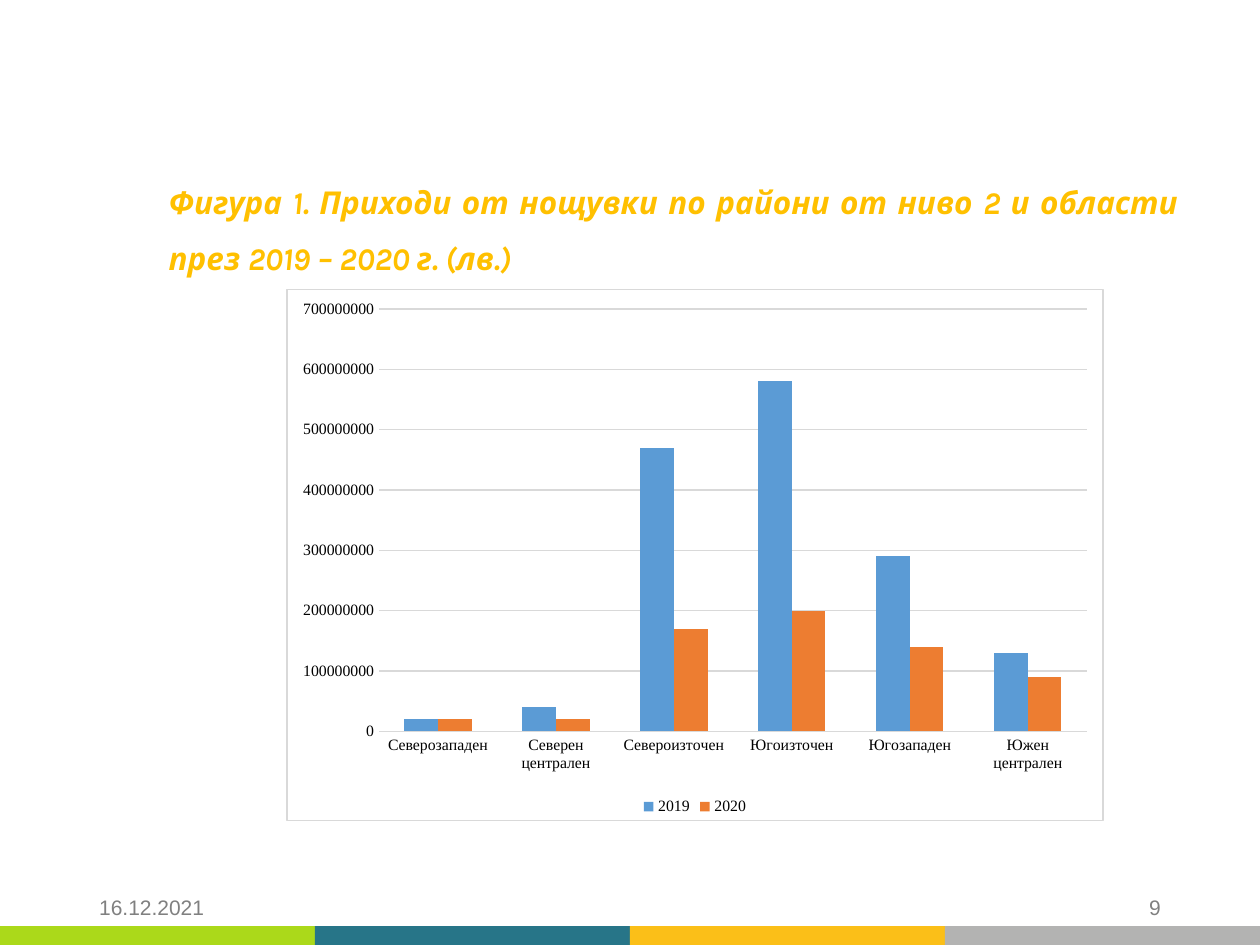
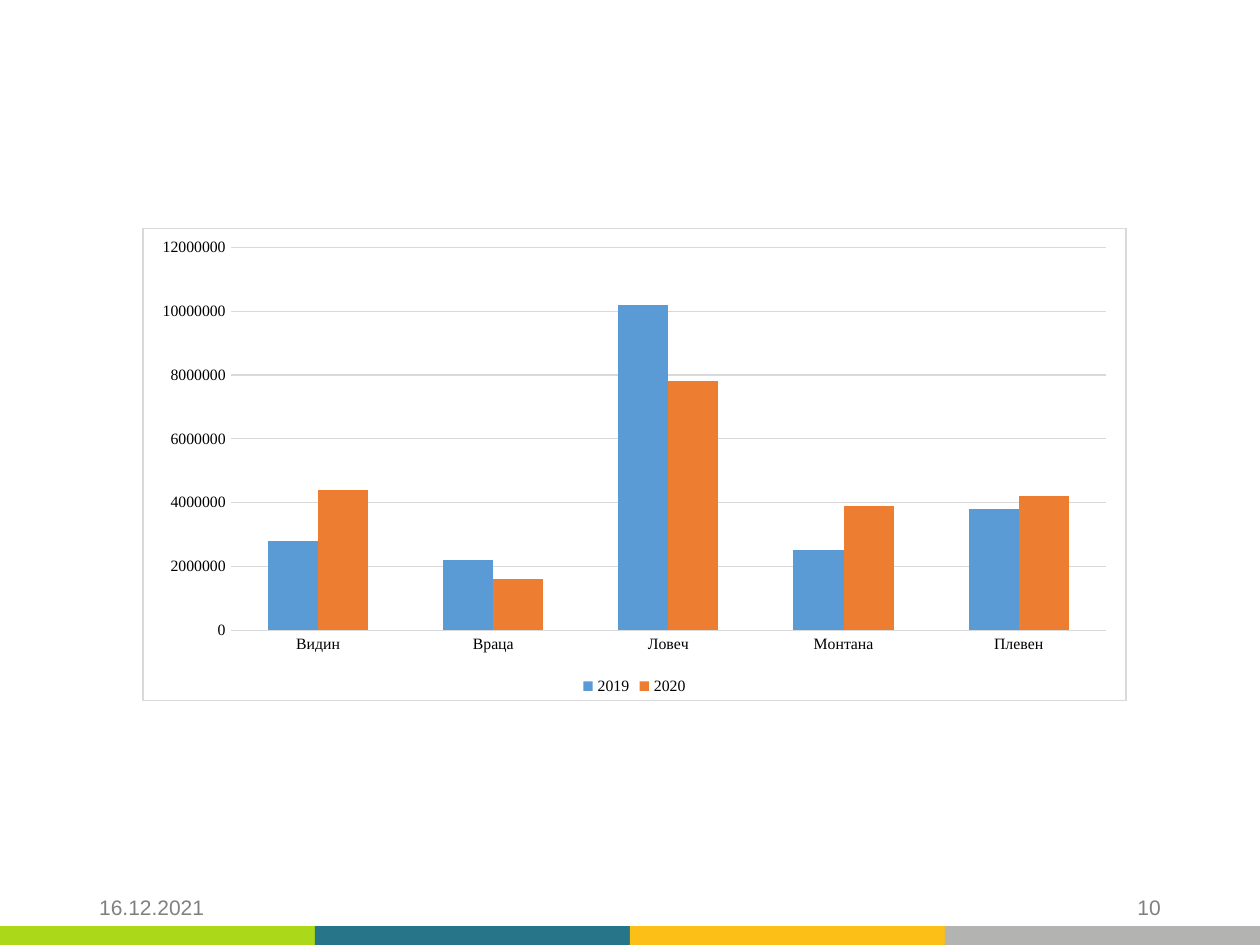
from lxml import etree
from pptx import Presentation
from pptx.chart.data import CategoryChartData
from pptx.dml.color import RGBColor
from pptx.enum.chart import XL_CHART_TYPE, XL_LEGEND_POSITION, XL_TICK_MARK
from pptx.enum.shapes import MSO_SHAPE
from pptx.enum.text import MSO_ANCHOR, MSO_AUTO_SIZE, PP_ALIGN
from pptx.oxml import parse_xml
from pptx.oxml.ns import nsdecls
from pptx.util import Cm, Pt

# Colours
GREEN = RGBColor(0xAB, 0xD9, 0x1A)
TEAL = RGBColor(0x27, 0x75, 0x88)
YELLOW = RGBColor(0xFB, 0xBF, 0x18)
SILVER = RGBColor(0xB3, 0xB3, 0xB2)
GOLD = RGBColor(0xFF, 0xC0, 0x00)
FOOTER_GREY = RGBColor(0x80, 0x80, 0x80)
GRID_GREY = RGBColor(0xD9, 0xD9, 0xD9)
BLACK = RGBColor(0x00, 0x00, 0x00)
BLUE = RGBColor(0x5B, 0x9B, 0xD5)
ORANGE = RGBColor(0xED, 0x7D, 0x31)

BANDS = (GREEN, TEAL, YELLOW, SILVER)
SERIES_COLOURS = (BLUE, ORANGE)
DATE = "16.12.2021"
SLIDE_WIDTH, SLIDE_HEIGHT = 25.4, 19.05


def style_font(font, name, size, colour, emphasis=False):
    font.name = name
    font.size = Pt(size)
    font.color.rgb = colour
    font.bold = font.italic = emphasis


class Deck:
    """Holds the shared style and the slide being built."""

    def __init__(self):
        self.presentation = Presentation()
        self.presentation.slide_width = Cm(SLIDE_WIDTH)
        self.presentation.slide_height = Cm(SLIDE_HEIGHT)
        self.slide = None

    def new_slide(self, number):
        self.slide = self.presentation.slides.add_slide(self.presentation.slide_layouts[6])
        self.add_bands()
        self.add_footer(1.75, DATE, PP_ALIGN.LEFT)
        self.add_footer(17.93, str(number), PP_ALIGN.RIGHT)

    def add_bands(self):
        width, height = SLIDE_WIDTH / len(BANDS), 0.38
        for index, colour in enumerate(BANDS):
            band = self.slide.shapes.add_shape(
                MSO_SHAPE.RECTANGLE, Cm(index * width), Cm(SLIDE_HEIGHT - height),
                Cm(width), Cm(height))
            band.shadow.inherit = False
            band.fill.solid()
            band.fill.fore_color.rgb = colour
            band.line.fill.background()

    def add_text_box(self, left, top, width, height):
        box = self.slide.shapes.add_textbox(Cm(left), Cm(top), Cm(width), Cm(height))
        box.text_frame.word_wrap = True
        return box.text_frame

    def add_footer(self, left, text, alignment):
        text_frame = self.add_text_box(left, 17.65, 5.72, 1.02)
        text_frame.vertical_anchor = MSO_ANCHOR.BOTTOM
        text_frame.text = text
        paragraph = text_frame.paragraphs[0]
        paragraph.alignment = alignment
        style_font(paragraph.runs[0].font, "Arial", 12, FOOTER_GREY)

    def add_caption(self, start, rest):
        text_frame = self.add_text_box(3.15, 3.18, 20.85, 2.41)
        text_frame.auto_size = MSO_AUTO_SIZE.SHAPE_TO_FIT_TEXT
        paragraph = text_frame.paragraphs[0]
        paragraph.alignment = PP_ALIGN.JUSTIFY
        paragraph.line_spacing = 1.5
        paragraph.space_after = Pt(10)
        for text, size, emphasis in ((start, 18, True), (" ", 16, False), (rest, 18, True)):
            run = paragraph.add_run()
            run.text = text
            style_font(run.font, "Karla", size, GOLD, emphasis)

    def add_column_chart(self, position, categories, series_values, maximum, step):
        data = CategoryChartData(number_format="0")
        data.categories = categories
        for name, values in series_values.items():
            data.add_series(name, values)
        chart = self.slide.shapes.add_chart(
            XL_CHART_TYPE.COLUMN_CLUSTERED, *map(Cm, position), data).chart
        style_font(chart.font, "Calibri", 10, BLACK)
        chart.has_title = False

        # Columns
        plot = chart.plots[0]
        plot.gap_width = 150
        plot.overlap = 0
        plot.vary_by_categories = False
        for series, colour in zip(plot.series, SERIES_COLOURS):
            series.invert_if_negative = False
            series.format.fill.solid()
            series.format.fill.fore_color.rgb = colour

        # Axes and legend
        for axis in (chart.category_axis, chart.value_axis):
            axis.major_tick_mark = axis.minor_tick_mark = XL_TICK_MARK.NONE
            axis.format.line.fill.background()
            style_font(axis.tick_labels.font, "Times New Roman", 9, BLACK)
        value_axis = chart.value_axis
        value_axis.minimum_scale = 0
        value_axis.maximum_scale = maximum
        value_axis.major_unit = step
        value_axis.tick_labels.number_format = "0"
        value_axis.tick_labels.number_format_is_linked = False
        value_axis.has_major_gridlines = True
        value_axis.major_gridlines.format.line.color.rgb = GRID_GREY
        value_axis.major_gridlines.format.line.width = Pt(0.75)
        chart.has_legend = True
        chart.legend.position = XL_LEGEND_POSITION.BOTTOM
        chart.legend.include_in_layout = False
        style_font(chart.legend.font, "Times New Roman", 9, BLACK)
        self.frame_chart(chart)

    def frame_chart(self, chart):
        """Give the chart area a white fill and a thin grey border."""
        frame = parse_xml(
            f'<c:spPr {nsdecls("c", "a")}>'
            '<a:solidFill><a:srgbClr val="FFFFFF"/></a:solidFill>'
            f'<a:ln w="{Pt(0.75)}"><a:solidFill><a:srgbClr val="{GRID_GREY}"/>'
            '</a:solidFill></a:ln></c:spPr>')
        chart_space = chart.element
        tag = etree.QName(chart_space).namespace
        chart_space.find(f"{{{tag}}}chart").addnext(frame)


def main():
    deck = Deck()

    # Revenue by region
    deck.new_slide(9)
    deck.add_caption("Фигура 1. Приходи от нощувки",
                     "по райони от ниво 2 и области през 2019 – 2020 г. (лв.)")
    deck.add_column_chart(
        (5.77, 5.82, 16.48, 10.74),
        ("Северозападен", "Северен централен", "Североизточен",
         "Югоизточен", "Югозападен", "Южен централен"),
        {"2019": (20000000, 40000000, 470000000, 580000000, 290000000, 130000000),
         "2020": (20000000, 20000000, 170000000, 200000000, 140000000, 90000000)},
        maximum=700000000, step=100000000)

    # Revenue by district of the north-west region
    deck.new_slide(10)
    deck.add_column_chart(
        (2.87, 4.6, 19.84, 9.53),
        ("Видин", "Враца", "Ловеч", "Монтана", "Плевен"),
        {"2019": (2800000, 2200000, 10200000, 2500000, 3800000),
         "2020": (4400000, 1600000, 7800000, 3900000, 4200000)},
        maximum=12000000, step=2000000)

    deck.presentation.save("out.pptx")


if __name__ == "__main__":
    main()
